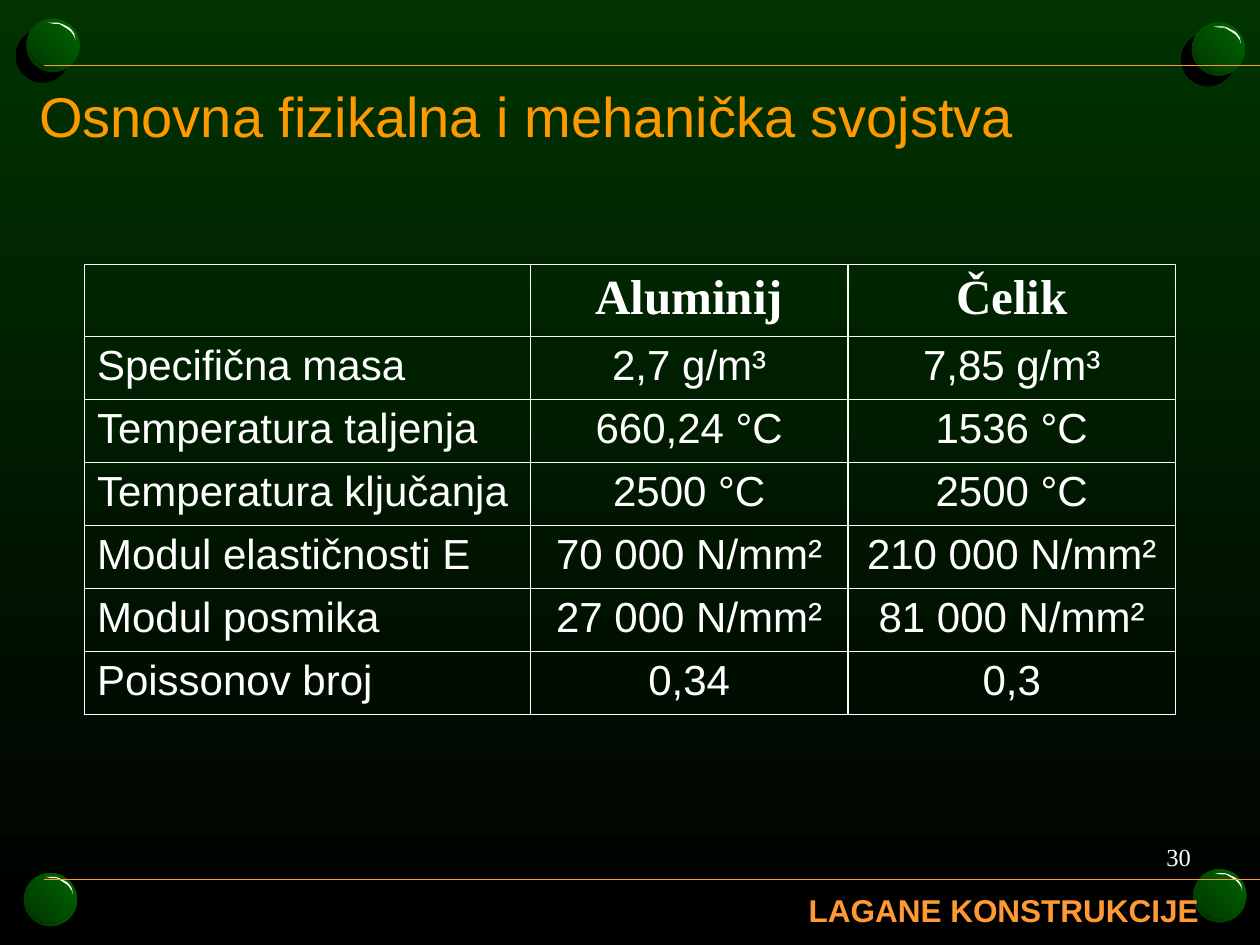
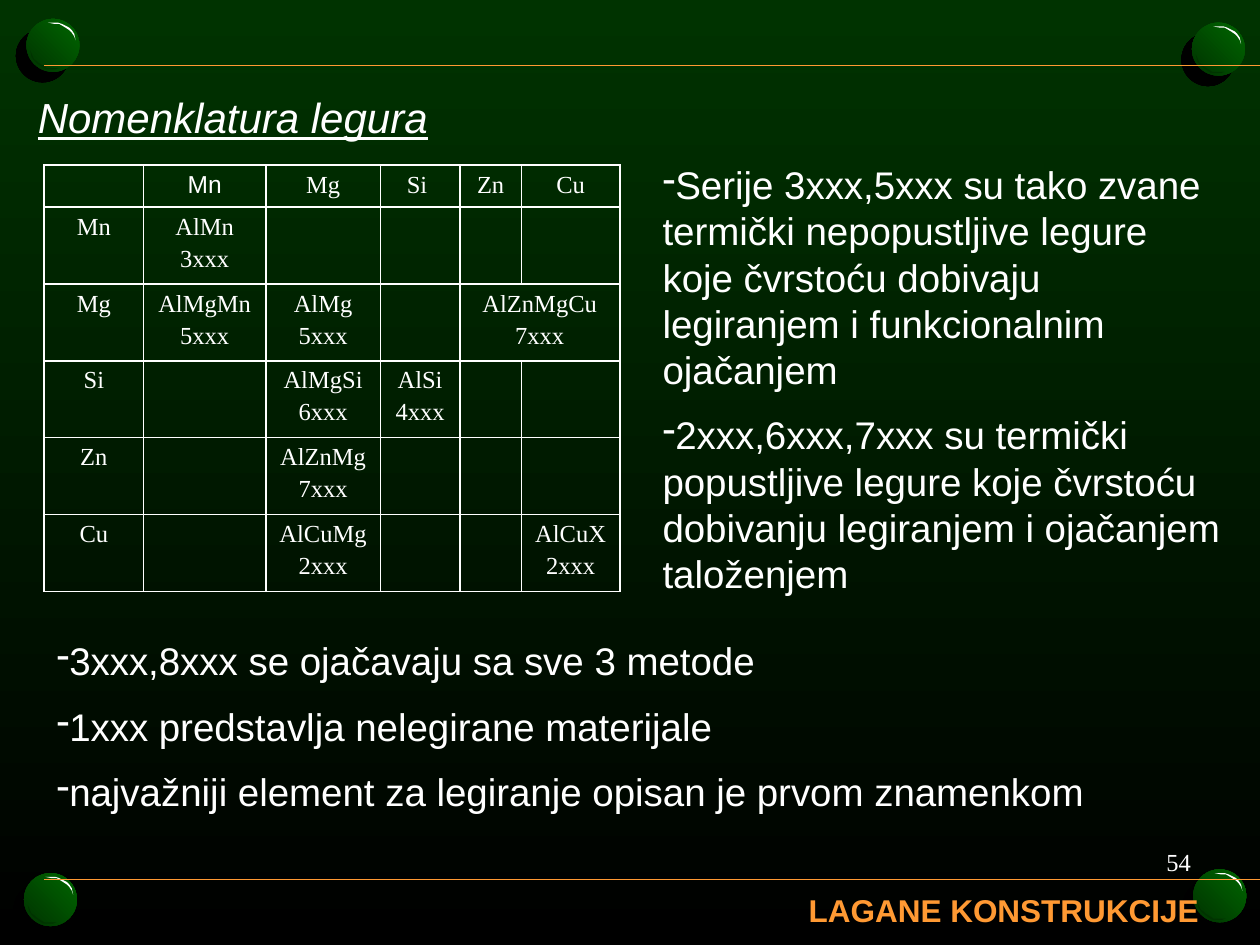
import lxml.etree
import pptx
import pptx.dml.color
import pptx.enum.shapes
import pptx.enum.text
import pptx.oxml.ns
import pptx.util

Inches = pptx.util.Inches
Pt = pptx.util.Pt
qn = pptx.oxml.ns.qn
ALIGN = pptx.enum.text.PP_ALIGN
ANCHOR = pptx.enum.text.MSO_ANCHOR

WHITE = "FFFFFF"
BLACK = "000000"
DARK_GREEN = "003300"
GREEN = "006600"
TITLE_ORANGE = "FF9900"
FOOTER_ORANGE = "FF9933"
SANS = "Arial"
SERIF = "Times New Roman"

BALL_SIZE = 0.42
BALL_CORNERS = [(0.21, 0.15), (9.46, 0.18), (9.47, 6.9), (0.19, 6.93)]
HIGHLIGHT = [(17, 3), (25, 3), (28, 4), (30, 5), (34, 7), (36, 9), (38, 12),
             (39, 17), (38, 14), (36, 11), (34, 9), (31, 7), (26, 4), (22, 4)]
SHADE = [(26, 39), (20, 39), (16, 39), (13, 37), (10, 35), (8, 33), (6, 32),
         (3, 25), (4, 30), (6, 33), (8, 35), (12, 38), (15, 40), (19, 40), (23, 40)]

PROPERTIES = [
    ["", "Aluminij", "Čelik"],
    ["Specifična masa", "2,7 g/m³", "7,85 g/m³"],
    ["Temperatura taljenja", "660,24 °C", "1536 °C"],
    ["Temperatura ključanja", "2500 °C", "2500 °C"],
    ["Modul elastičnosti E", "70 000 N/mm²", "210 000 N/mm²"],
    ["Modul posmika", "27 000 N/mm²", "81 000 N/mm²"],
    ["Poissonov broj", "0,34", "0,3"],
]
ALLOYS = [
    ["", "Mn", "Mg", "Si ", "Zn", "Cu"],
    ["Mn", "AlMn\n3xxx", "", "", "", ""],
    ["Mg", "AlMgMn\n5xxx", "AlMg\n5xxx", "", "AlZnMgCu\n7xxx", None],
    ["Si", "", "AlMgSi\n6xxx", "AlSi\n4xxx", "", ""],
    ["Zn", "", "AlZnMg\n7xxx", "", "", ""],
    ["Cu", "", "AlCuMg\n2xxx", "", "", "AlCuX\n2xxx"],
]
SERIES_NOTES = [
    "Serije 3xxx,5xxx su tako zvane termički nepopustljive legure koje čvrstoću "
    "dobivaju legiranjem i funkcionalnim ojačanjem",
    "2xxx,6xxx,7xxx su termički popustljive legure koje čvrstoću dobivanju "
    "legiranjem i ojačanjem taloženjem",
]
NUMBERING_NOTES = [
    "3xxx,8xxx se ojačavaju sa sve 3 metode",
    "1xxx predstavlja nelegirane materijale",
    "najvažniji element za legiranje opisan je prvom znamenkom",
]


def rgb(value):
    return pptx.dml.color.RGBColor.from_string(value)


def add_run(p, text, size, font=SANS, color=WHITE, bold=False):
    r = p.add_run()
    r.text = text
    r.font.size = Pt(size)
    r.font.name = font
    r.font.color.rgb = rgb(color)
    r.font.bold = bold
    return r


def set_gradient(fill, start, end, angle):
    fill.gradient()
    fill.gradient_angle = angle
    for stop, color in zip(fill.gradient_stops, (start, end)):
        stop.color.rgb = rgb(color)


def add_text_box(s, left, top, width, height):
    sp = s.shapes.add_textbox(*map(Inches, (left, top, width, height)))
    tf = sp.text_frame
    tf.word_wrap = True
    return tf


def add_facet(shapes, left, top, points, color):
    points = [(round(left * 100) + x, round(top * 100) + y) for x, y in points]
    builder = shapes.build_freeform(*points[0], scale=Inches(0.01))
    builder.add_line_segments(points[1:], close=True)
    sp = builder.convert_to_shape()
    sp.shadow.inherit = False
    sp.fill.solid()
    sp.fill.fore_color.rgb = rgb(color)
    sp.line.fill.background()


def add_ball(s, left, top):
    shapes = s.shapes.add_group_shape().shapes
    sp = shapes.add_shape(pptx.enum.shapes.MSO_SHAPE.OVAL, Inches(left), Inches(top),
                          Inches(BALL_SIZE), Inches(BALL_SIZE))
    set_gradient(sp.fill, DARK_GREEN, GREEN, 45)
    sp.line.fill.background()
    sp.shadow.inherit = False
    effects = sp._element.spPr.find(qn("a:effectLst"))
    shadow = lxml.etree.SubElement(effects, qn("a:outerShdw"), blurRad="0",
                                   dist=str(Pt(8.5)), dir=str(135 * 60000),
                                   algn="ctr", rotWithShape="0")
    lxml.etree.SubElement(shadow, qn("a:srgbClr"), val=BLACK)
    add_facet(shapes, left, top, HIGHLIGHT, WHITE)
    add_facet(shapes, left, top, SHADE, DARK_GREEN)


def add_rule(s, y):
    line = s.shapes.add_connector(pptx.enum.shapes.MSO_CONNECTOR.STRAIGHT,
                                  Inches(10), Inches(y), Inches(0.35), Inches(y))
    line.line.color.rgb = rgb(FOOTER_ORANGE)
    line.line.width = Pt(0.75)
    lxml.etree.SubElement(line._element.spPr, qn("a:effectLst"))


def add_slide(prs):
    s = prs.slides.add_slide(prs.slide_layouts[5])
    set_gradient(s.background.fill, DARK_GREEN, BLACK, 270)
    for left, top in BALL_CORNERS:
        add_ball(s, left, top)
    for y in (0.52, 6.98):
        add_rule(s, y)
    tf = add_text_box(s, 6.32, 7.02, 3.3, 0.4)
    tf.word_wrap = False
    add_run(tf.paragraphs[0], "LAGANE KONSTRUKCIJE", 18, color=FOOTER_ORANGE, bold=True)
    return s


def set_title(s, text, box, size, color, anchor):
    title = s.shapes.title
    title.left, title.top, title.width, title.height = map(Inches, box)
    tf = title.text_frame
    tf.auto_size = pptx.enum.text.MSO_AUTO_SIZE.NONE
    tf.vertical_anchor = anchor
    p = tf.paragraphs[0]
    p.alignment = ALIGN.LEFT
    return add_run(p, text, size, color=color)


def add_slide_number(s, number, top):
    tf = add_text_box(s, 7.36, top, 2.19, 0.5)
    tf.vertical_anchor = ANCHOR.MIDDLE
    p = tf.paragraphs[0]
    p.alignment = ALIGN.RIGHT
    add_run(p, number, 14, SERIF)


def add_dash_list(s, box, items):
    tf = add_text_box(s, *box)
    for i, item in enumerate(items):
        p = tf.paragraphs[0] if i == 0 else tf.add_paragraph()
        pPr = p._p.get_or_add_pPr()
        pPr.set("marL", "0")
        pPr.set("indent", "0")
        lxml.etree.SubElement(pPr, qn("a:buChar"), char="-")
        if i:
            p.space_before = Pt(11)
        add_run(p, item, 22)


def set_borders(cell):
    tcPr = cell._tc.get_or_add_tcPr()
    for side in ("lnL", "lnR", "lnT", "lnB"):
        ln = lxml.etree.SubElement(tcPr, qn(f"a:{side}"), w=str(Pt(1)))
        fill = lxml.etree.SubElement(ln, qn("a:solidFill"))
        lxml.etree.SubElement(fill, qn("a:srgbClr"), val=WHITE)


def fill_cell(cell, text, size, font, bold, align):
    tf = cell.text_frame
    for i, line in enumerate(text.split("\n")):
        p = tf.paragraphs[0] if i == 0 else tf.add_paragraph()
        p.alignment = align
        if i:
            p.space_before = Pt(size * 0.2)
        if line:
            add_run(p, line, size, font, bold=bold)
        else:
            lxml.etree.SubElement(p._p, qn("a:endParaRPr"), sz=str(size * 100))


def add_grid(s, left, top, widths, heights, rows, style):
    frame = s.shapes.add_table(len(rows), len(widths), Inches(left), Inches(top),
                               Inches(sum(widths)), Inches(sum(heights)))
    table = frame.table
    table.first_row = False
    table.horz_banding = False
    for column, width in zip(table.columns, widths):
        column.width = Inches(width)
    for row, height in zip(table.rows, heights):
        row.height = Inches(height)
    for i, texts in enumerate(rows):
        for j, text in enumerate(texts):
            cell = table.cell(i, j)
            set_borders(cell)
            cell.fill.background()
            if text is None:
                table.cell(i, j - 1).merge(cell)
            else:
                fill_cell(cell, text, *style(i, j))


def property_style(i, j):
    if i == 0:
        return 28, SERIF, True, ALIGN.CENTER
    return 24, SANS, False, ALIGN.CENTER if j else ALIGN.LEFT


def alloy_style(i, j):
    return 14, SANS if (i, j) == (0, 1) else SERIF, False, ALIGN.CENTER


def add_properties_slide(prs):
    s = add_slide(prs)
    set_title(s, "Osnovna fizikalna i mehanička svojstva", (0.21, 0.25, 9.63, 1.33),
              32, TITLE_ORANGE, ANCHOR.MIDDLE)
    add_grid(s, 0.67, 2.1, [3.54, 2.52, 2.6], [0.57] + [0.5] * 6,
             PROPERTIES, property_style)
    add_slide_number(s, "30", 6.55)


def add_alloys_slide(prs):
    s = add_slide(prs)
    r = set_title(s, "Nomenklatura legura", (0.2, 0.68, 9.64, 0.55),
                  24, WHITE, ANCHOR.TOP)
    r.font.italic = True
    r.font.underline = True
    add_grid(s, 0.35, 1.31, [0.79, 0.97, 0.91, 0.63, 0.49, 0.78], [0.33] + [0.61] * 5,
             ALLOYS, alloy_style)
    add_dash_list(s, (5.16, 1.23, 4.65, 3.62), SERIES_NOTES)
    add_dash_list(s, (0.35, 5.01, 9.45, 2.12), NUMBERING_NOTES)
    add_slide_number(s, "54", 6.59)


def main():
    prs = pptx.Presentation()
    prs.slide_width = Inches(10)
    prs.slide_height = Inches(7.5)
    add_properties_slide(prs)
    add_alloys_slide(prs)
    prs.save("out.pptx")


if __name__ == "__main__":
    main()
